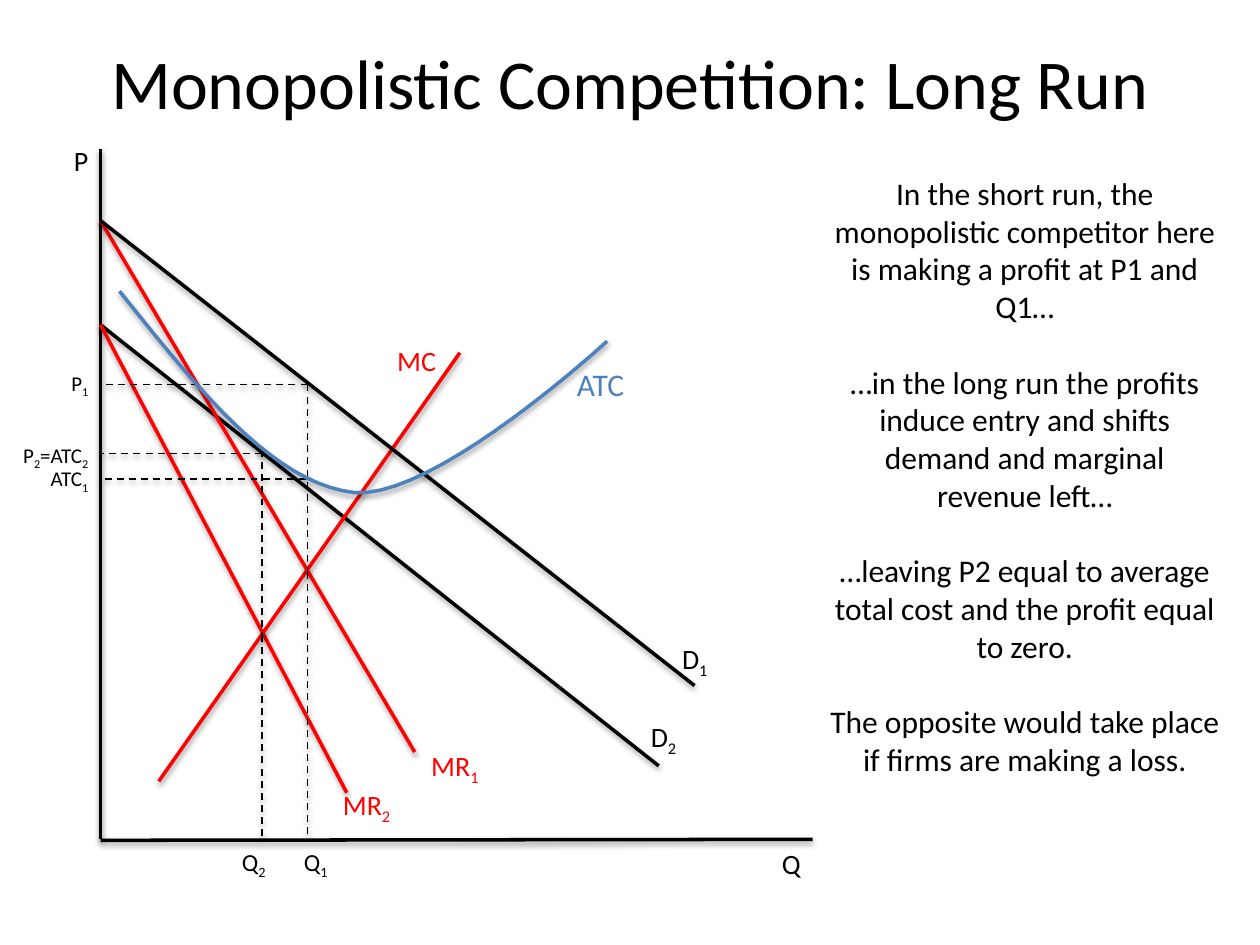
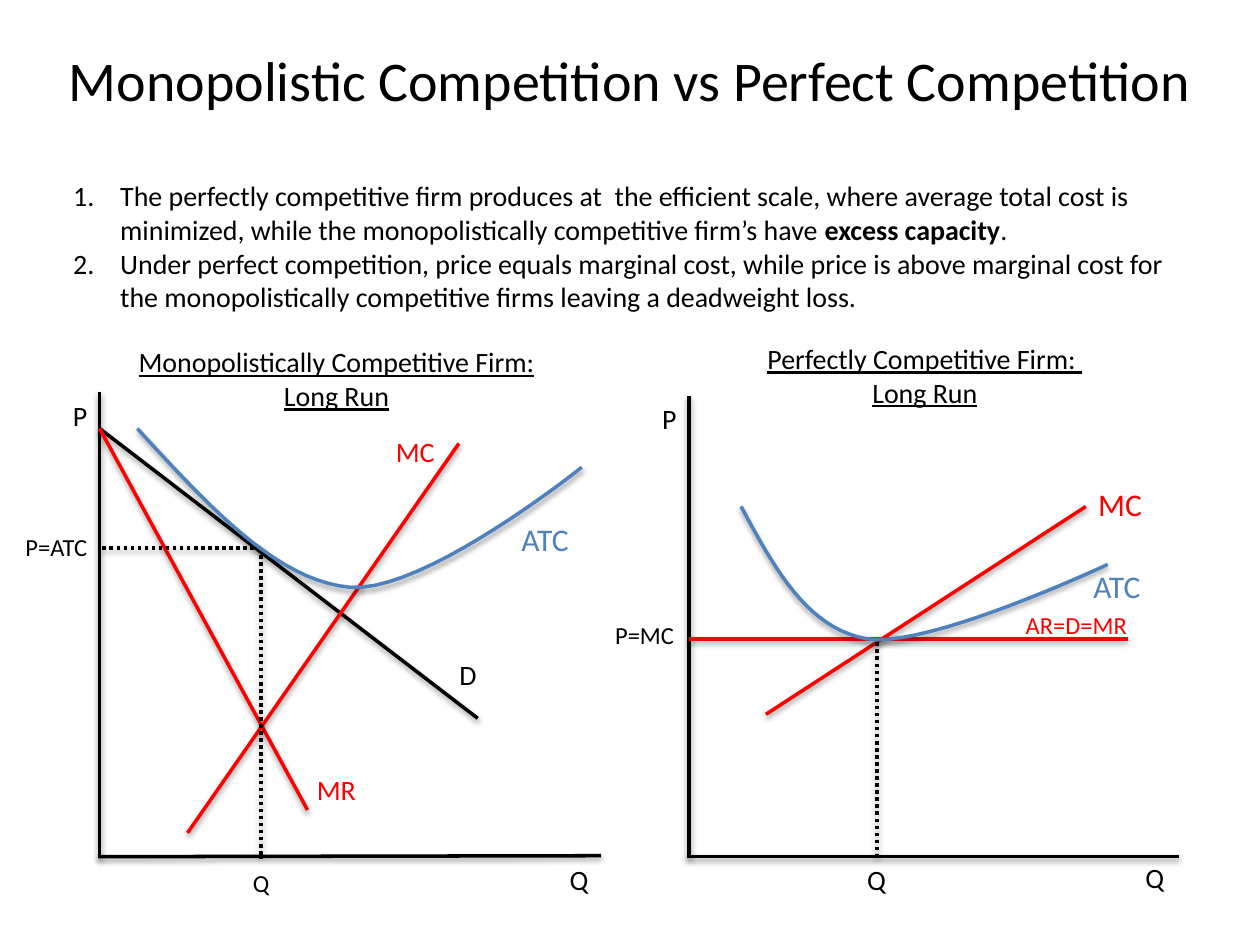
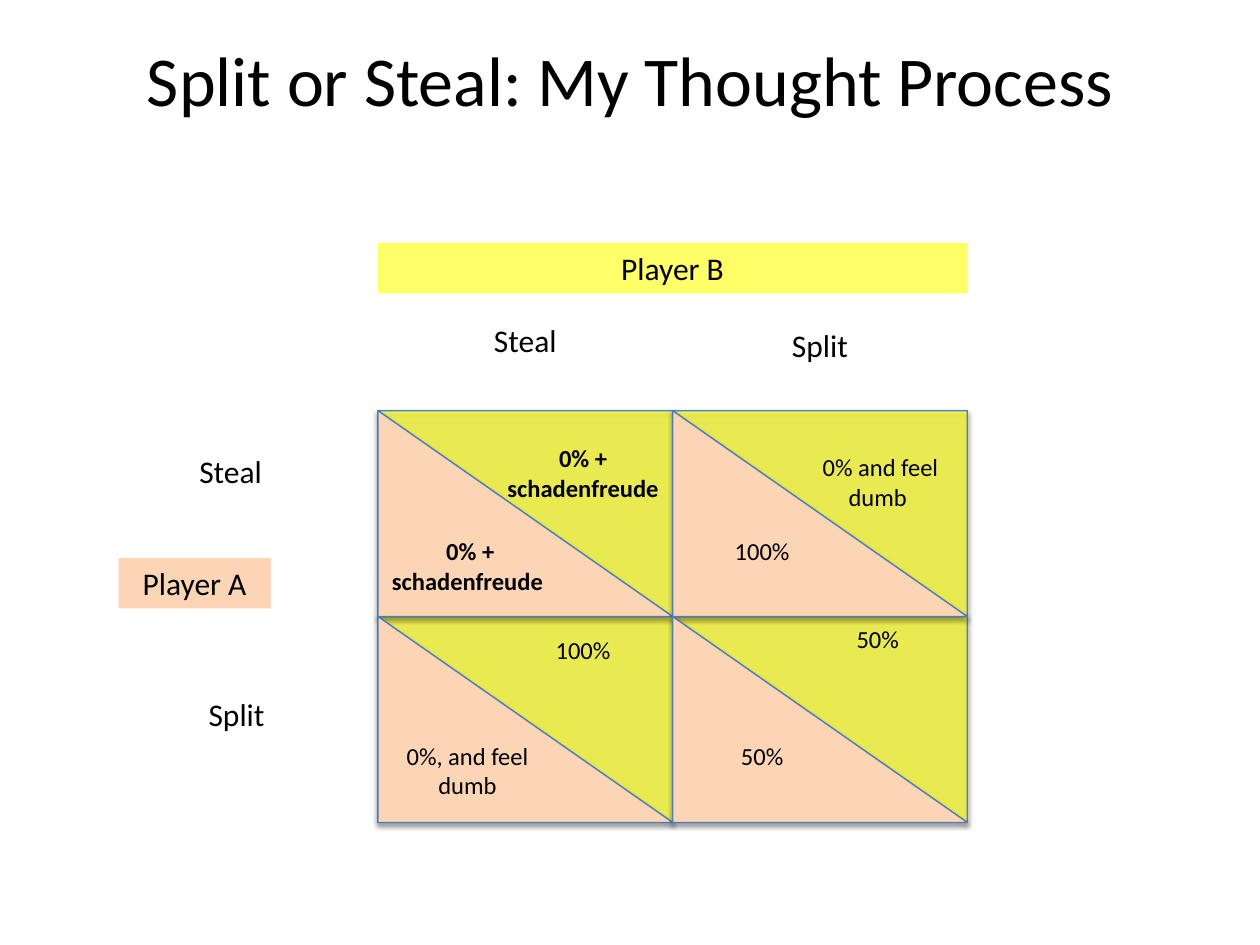
"""Build three slides on monopolistic competition and a payoff matrix."""
from lxml import etree
from pptx import Presentation
from pptx.dml.color import RGBColor
from pptx.enum import dml, shapes, text
from pptx.oxml import ns
from pptx.util import Cm, Pt

BLACK = RGBColor(0x00, 0x00, 0x00)
RED = RGBColor(0xFF, 0x00, 0x00)
BLUE = RGBColor(0x4F, 0x81, 0xBD)
EDGE = RGBColor(0x4B, 0x7E, 0xBC)
YELLOW = RGBColor(0xFF, 0xFF, 0x00)
PEACH = RGBColor(0xFC, 0xD5, 0xB5)
FONT = "Calibri"
LEFT, CENTER, RIGHT = text.PP_ALIGN.LEFT, text.PP_ALIGN.CENTER, text.PP_ALIGN.RIGHT
SOLID, DASH, DOT = None, dml.MSO_LINE.DASH, dml.MSO_LINE.ROUND_DOT


def add_label(slide, words, left, top, width, size=16, align=CENTER, color=BLACK, rows=1):
    """Add a text box in which an underscore lowers the next character."""
    height = 0.25 + 0.0425 * size * rows
    label = slide.shapes.add_textbox(Cm(left), Cm(top), Cm(width), Cm(height))
    frame = label.text_frame
    frame.word_wrap = True
    frame.text = words.replace("_", "")
    for paragraph, line in zip(frame.paragraphs, words.split("\n")):
        paragraph.alignment = align
        first, *others = line.split("_")
        paragraph.runs[0].text = first
        for part in others:
            subscript = paragraph.add_run()
            subscript.text = part[0]
            subscript.font._element.set("baseline", "-25000")
            if part[1:]:
                paragraph.add_run().text = part[1:]
        for run in paragraph.runs:
            run.font.name, run.font.size = FONT, Pt(size)
            run.font.color.rgb = color
    return label


def add_line(slide, start_x, start_y, end_x, end_y, color=BLACK, width=2, dash=SOLID):
    """Add a straight line that keeps the soft shadow of the theme."""
    line = slide.shapes.add_connector(
        shapes.MSO_CONNECTOR.STRAIGHT, Cm(start_x), Cm(start_y), Cm(end_x), Cm(end_y))
    line.line.color.rgb = color
    line.line.width = Pt(width)
    if dash:
        line.line.dash_style = dash


presentation = Presentation()
presentation.slide_width, presentation.slide_height = Cm(25.4), Cm(19.05)

slides = []
for layout, words, size, top in [
    (5, "Monopolistic Competition: Long Run", 40, 0.05),
    (1, "Monopolistic Competition vs Perfect Competition", 32, 0),
    (5, "Split or Steal: My Thought Process", 40, 0),
]:
    slide = presentation.slides.add_slide(presentation.slide_layouts[layout])
    title = slide.shapes.title
    title.left, title.top, title.width, title.height = Cm(0), Cm(top), Cm(25.4), Cm(3.18)
    title.text_frame.text = words
    title_font = title.text_frame.paragraphs[0].runs[0].font
    title_font.name, title_font.size = FONT, Pt(size)
    title_font.color.rgb = BLACK
    slides.append(slide)
long_run, comparison, payoffs = slides

for line in [
    (2.03, 3, 2.03, 16.92),
    (2.03, 16.94, 16.38, 16.92),
    (2.03, 6.55, 13.28, 15.44),
    (2.03, 6.55, 6.99, 15.98, RED),
    (3.2, 15.75, 9.27, 7.11, RED),
    (2.03, 4.45, 8.36, 15.16, RED),
    (2.03, 4.45, 14, 13.82),
]:
    add_line(long_run, *line)
for guide in [
    (6.2, 7.75, 6.2, 11.53),
    (6.2, 11.53, 6.2, 16.92),
    (5.28, 9.07, 5.28, 12.8),
    (5.28, 12.8, 5.28, 16.92),
    (6.2, 7.75, 2.03, 7.75),
    (5.28, 9.14, 2.03, 9.14),
    (6.17, 9.65, 2.03, 9.65),
]:
    add_line(long_run, *guide, width=1, dash=DASH)

for line in [
    (2.01, 7.9, 2.01, 17.3),
    (1.98, 17.27, 12.12, 17.25),
    (2.01, 8.64, 9.63, 14.48),
    (2.01, 8.64, 6.2, 16.33, RED),
    (3.78, 16.79, 9.25, 8.94, RED),
    (13.89, 7.98, 13.89, 17.3),
    (13.84, 17.27, 23.77, 17.27),
    (21.89, 10.21, 15.44, 14.4, RED),
    (22.73, 12.88, 13.89, 12.88, RED),
]:
    add_line(comparison, *line)
for guide in [
    (5.26, 11.05, 5.26, 17.3),
    (5.26, 11.05, 2.01, 11.05),
    (17.68, 12.95, 17.68, 17.27),
]:
    add_line(comparison, *guide, dash=DOT)

STEPS = 20
for slide, knots in [
    (long_run, [(2.41, 5.87), (3.96, 7.8), (5.49, 9.75), (7.14, 9.93),
                (8.76, 10.08), (12.24, 6.88), (12.24, 6.88)]),
    (comparison, [(2.77, 8.64), (4.17, 10.16), (5.56, 11.71), (7.06, 11.84),
                  (8.56, 11.96), (11.73, 9.42), (11.73, 9.42)]),
    (comparison, [(14.94, 10.21), (15.6, 11.43), (16.26, 12.67), (17.48, 12.88),
                  (18.72, 13.08), (22.33, 11.38), (22.33, 11.38)]),
]:
    points = []
    for first in (0, 3):
        for step in range(1, STEPS + 1):
            t = step / STEPS
            weights = ((1 - t) ** 3, 3 * t * (1 - t) ** 2, 3 * t ** 2 * (1 - t), t ** 3)
            bend = list(zip(weights, knots[first:first + 4]))
            points.append([Cm(sum(weight * knot[axis] for weight, knot in bend))
                           for axis in (0, 1)])
    builder = slide.shapes.build_freeform(Cm(knots[0][0]), Cm(knots[0][1]))
    builder.add_line_segments(points, close=False)
    cost_curve = builder.convert_to_shape()
    cost_curve.fill.background()
    cost_curve.line.color.rgb = BLUE
    cost_curve.line.width = Pt(2)
    cost_curve._element.xpath(".//a:effectRef")[0].set("idx", "1")

for label in [
    ("P", 0.94, 2.77, 1.09, 16, RIGHT),
    ("Q", 15.37, 16.94, 1.02, 16, RIGHT),
    ("MC", 6.81, 6.81, 3.18, 16, CENTER, RED),
    ("ATC", 11.38, 7.24, 2.62, 18, LEFT, BLUE),
    ("MR_1", 6.91, 14.96, 4.52, 16, CENTER, RED),
    ("MR_2", 5.13, 15.75, 4.52, 16, CENTER, RED),
    ("D_1", 12.01, 12.8, 3.99),
    ("D_2", 11.38, 14.38, 3.99),
    ("P_1", 0.94, 7.34, 1.09, 12, RIGHT),
    ("P_2=ATC_2", -0.89, 8.79, 2.92, 12, RIGHT),
    ("ATC_1", 0.58, 9.27, 1.45, 12, RIGHT),
    ("Q_2", 4.19, 16.94, 1.85, 14),
    ("Q_1", 5.44, 16.94, 1.85, 14),
]:
    add_label(long_run, *label)

story = add_label(
    long_run,
    "In the short run, the monopolistic competitor here is making a profit at P1 and Q1…\n"
    "…in the long run the profits induce entry and shifts demand and marginal revenue left…\n"
    "…leaving P2 equal to average total cost and the profit equal to zero.\n"
    "The opposite would take place if firms are making a loss.",
    16.48, 3.38, 8.36, 18, rows=17)
for paragraph in story.text_frame.paragraphs[1:]:
    paragraph.space_before = Pt(21.5)

for label in [
    ("P", -0.91, 7.9, 2.92, 16, RIGHT),
    ("Q", 10.97, 17.27, 1.14, 16, RIGHT),
    ("MC", 6.78, 8.64, 3.18, 16, CENTER, RED),
    ("ATC", 10.26, 10.36, 2.29, 18, LEFT, BLUE),
    ("MR", 4.52, 15.44, 4.52, 16, CENTER, RED),
    ("D", 7.44, 13.13, 3.99),
    ("P=ATC", -0.91, 10.59, 2.92, 14, RIGHT),
    ("Q", 4.34, 17.37, 1.85, 14),
    ("P", 13.08, 7.98, 0.81, 16, RIGHT),
    ("Q", 20.8, 17.22, 2.92, 16, RIGHT),
    ("MC", 21.89, 9.65, 2.72, 18, LEFT, RED),
    ("ATC", 21.79, 11.3, 2.24, 18, LEFT, BLUE),
    ("AR=D=MR", 20.24, 12.17, 2.92, 14, CENTER, RED),
    ("P=MC", 10.92, 12.37, 2.92, 14, RIGHT),
    ("Q", 15.19, 17.27, 2.92, 16, RIGHT),
]:
    add_label(comparison, *label)
for words, left, top in [
    ("Monopolistically Competitive Firm: Long Run", 2.11, 6.83),
    ("Perfectly Competitive Firm: \nLong Run", 13.97, 6.76),
]:
    heading = add_label(comparison, words, left, top, 9.35, rows=2)
    for paragraph in heading.text_frame.paragraphs:
        paragraph.runs[0].font.underline = True

body = comparison.placeholders[1]
body.left, body.top, body.width, body.height = Cm(1.22), Cm(3.48), Cm(23.19), Cm(3)
body.text_frame.auto_size = text.MSO_AUTO_SIZE.NONE
body.text_frame.text = (
    "The perfectly competitive firm produces at  the efficient scale, where average total "
    "cost is minimized, while the monopolistically competitive firm’s have \n"
    "Under perfect competition, price equals marginal cost, while price is above marginal "
    "cost for the monopolistically competitive firms leaving a deadweight loss.")
for words, bold in [("excess capacity", True), (".", False)]:
    run = body.text_frame.paragraphs[0].add_run()
    run.text, run.font.bold = words, bold
for paragraph in body.text_frame.paragraphs:
    paragraph.space_before = Pt(0)
    properties = paragraph._p.get_or_add_pPr()
    properties.set("marL", str(Cm(0.95)))
    properties.set("indent", str(-Cm(0.95)))
    etree.SubElement(properties, ns.qn("a:buFont"), typeface="+mj-lt")
    etree.SubElement(properties, ns.qn("a:buAutoNum"), type="arabicPeriod")
    for run in paragraph.runs:
        run.font.name, run.font.size = FONT, Pt(16)
        run.font.color.rgb = BLACK

GRID_LEFT, GRID_TOP, CELL_WIDTH, CELL_HEIGHT = 7.62, 8.28, 5.94, 4.15
PAYOFF_WIDTH = 3.61
translucent = []
for preset, color, rotation in [
    (shapes.MSO_SHAPE.RECTANGLE, None, 0),
    (shapes.MSO_SHAPE.RIGHT_TRIANGLE, YELLOW, 180),
    (shapes.MSO_SHAPE.RIGHT_TRIANGLE, PEACH, 0),
]:
    for row in range(2):
        for column in range(2):
            cell = payoffs.shapes.add_shape(
                preset, Cm(GRID_LEFT + column * CELL_WIDTH), Cm(GRID_TOP + row * CELL_HEIGHT),
                Cm(CELL_WIDTH), Cm(CELL_HEIGHT))
            cell.rotation = rotation
            cell.line.color.rgb = EDGE
            cell.line.width = Pt(0.75)
            if color is None:
                cell.fill.background()
            else:
                cell.fill.solid()
                cell.fill.fore_color.rgb = color
            if color == YELLOW:
                translucent.append(cell)

for words, left, top, width, color in [
    ("Player B", GRID_LEFT, 4.9, 2 * CELL_WIDTH, YELLOW),
    ("Player A", 2.39, 11.25, 3.07, PEACH),
]:
    player = add_label(payoffs, words, left, top, width, 18)
    player.fill.solid()
    player.fill.fore_color.rgb = color
    if color == YELLOW:
        translucent.append(player)
for shape in translucent:
    fill_color = shape._element.xpath("./p:spPr/a:solidFill/a:srgbClr")[0]
    etree.SubElement(fill_color, ns.qn("a:alpha"), val="60000")

for words, left, top in [
    ("Steal", GRID_LEFT, 6.35),
    ("Split", GRID_LEFT + CELL_WIDTH, 6.45),
    ("Steal", 1.68, 8.99),
    ("Split", 1.8, 13.89),
]:
    add_label(payoffs, words, left, top, CELL_WIDTH, 18)

for column, player_a, top_a, player_b, top_b in [
    (0, " 0% + schadenfreude", 10.69, "0% + schadenfreude", 8.81),
    (1, "100%", 10.69, " 0% and feel dumb", 8.99),
    (0, "0%, and feel dumb", 14.81, "100%", 12.67),
    (1, "50%", 14.81, "50%", 12.45),
]:
    left = GRID_LEFT + column * CELL_WIDTH
    for words, payoff_left, top in [
        (player_a, left, top_a),
        (player_b, left + CELL_WIDTH - PAYOFF_WIDTH, top_b),
    ]:
        rows = 2 if " " in words else 1
        payoff = add_label(payoffs, words, payoff_left, top, PAYOFF_WIDTH, 14, rows=rows)
        payoff.text_frame.paragraphs[0].runs[0].font.bold = "schadenfreude" in words

presentation.save("out.pptx")
